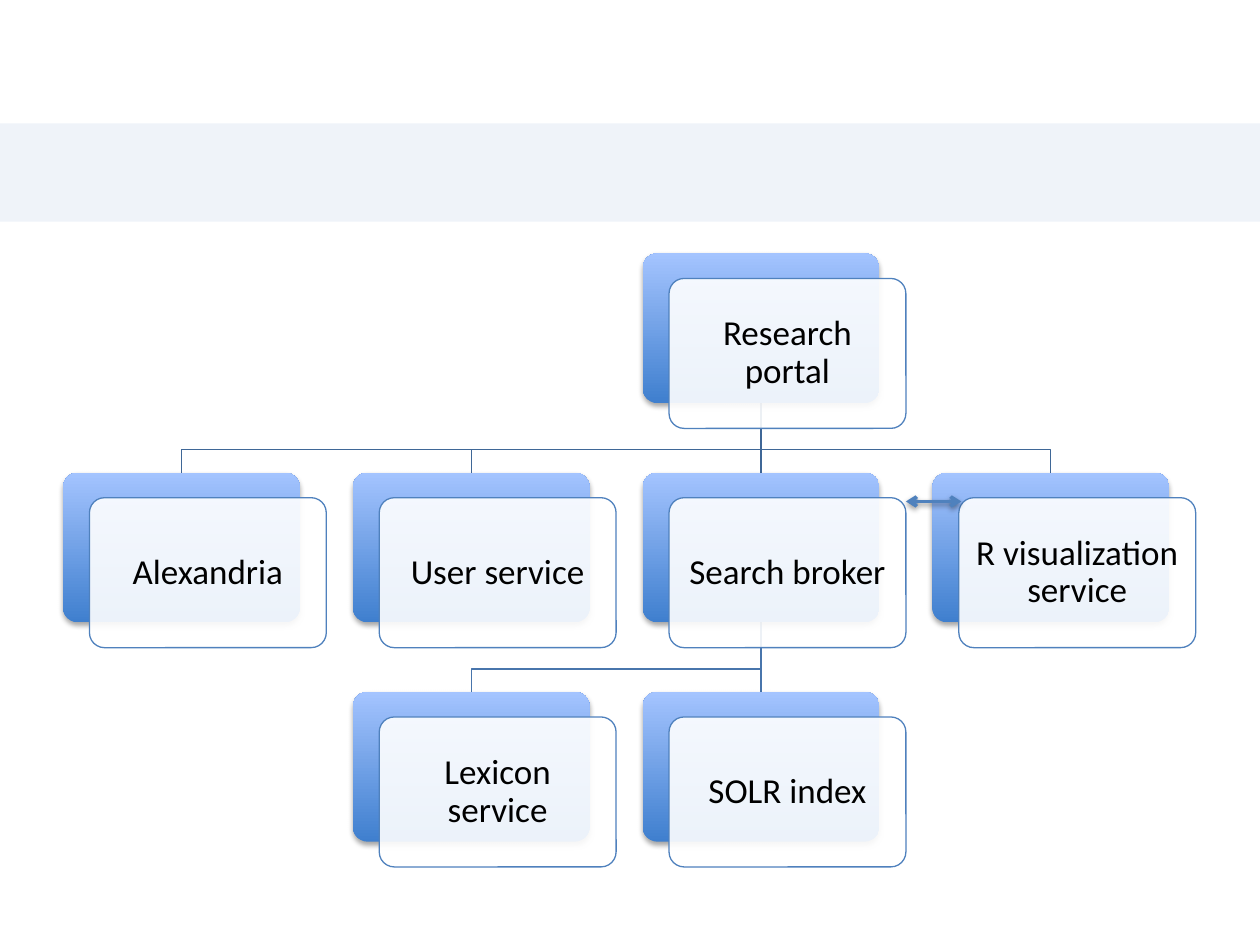
from pptx import Presentation, util as u
from pptx.dml.color import RGBColor
from pptx.enum import shapes, text
from pptx.oxml import parse_xml
from pptx.oxml.ns import nsdecls, qn
from lxml import etree

BLUE = RGBColor(0x4F, 0x81, 0xBD)
DEEP_BLUE = RGBColor(0x3F, 0x7F, 0xCE)
SKY_BLUE = RGBColor(0xA4, 0xC4, 0xFF)
PORTAL_LINK = RGBColor(0x3F, 0x67, 0x97)
BROKER_LINK = RGBColor(0x48, 0x75, 0xAC)
WHITE = RGBColor(0xFF, 0xFF, 0xFF)
BLACK = RGBColor(0, 0, 0)

# Card grid, in inches
LEFT, TOP = 0.5, 2.01
COLUMN_STEP, ROW_STEP = 2.3, 1.74
CARD_W, CARD_H = 1.88, 1.19
FRONT_SHIFT = 0.2
LINK_BEND = 0.37

# Name: (column, row)
SERVICES = {
    "Research portal": (2, 0),
    "Alexandria": (0, 1),
    "User service": (1, 1),
    "Search broker": (2, 1),
    "Lexicon service": (1, 2),
    "SOLR index": (2, 2),
    "R visualization service": (3, 1),
}
# Parent: (link colour, children)
TREE = {
    "Research portal": (PORTAL_LINK, ["R visualization service", "Search broker",
                                      "User service", "Alexandria"]),
    "Search broker": (BROKER_LINK, ["SOLR index", "Lexicon service"]),
}


def corner(name):
    column, row = SERVICES[name]
    return LEFT + column * COLUMN_STEP, TOP + row * ROW_STEP


def set_alpha(shape, percent):
    colour = shape.fill._xPr.find(qn("a:solidFill"))[0]
    etree.SubElement(colour, qn("a:alpha")).set("val", str(percent * 1000))


def set_effects(shape, shadow_alpha=None, blur=0, distance=0):
    """Replace the theme's shadow with a downward one, or with none."""
    properties = shape._element.spPr
    for old in properties.findall(qn("a:effectLst")):
        properties.remove(old)
    shadow = ""
    if shadow_alpha:
        shadow = (f'<a:outerShdw blurRad="{u.Pt(blur)}" dist="{u.Pt(distance)}" '
                  f'dir="5400000" rotWithShape="0"><a:srgbClr val="{BLACK}">'
                  f'<a:alpha val="{shadow_alpha * 1000}"/></a:srgbClr></a:outerShdw>')
    properties.append(parse_xml(
        f'<a:effectLst {nsdecls("a")}>{shadow}</a:effectLst>'))


def style_line(shape, colour, width):
    shape.line.color.rgb = colour
    shape.line.width = u.Pt(width)


def add_band(slide, width):
    band = slide.shapes.add_shape(shapes.MSO_SHAPE.RECTANGLE, 0, u.Inches(0.98),
                                  width, u.Inches(0.78))
    band.fill.solid()
    band.fill.fore_color.rgb = BLUE
    set_alpha(band, 9)
    band.line.fill.background()
    set_effects(band)


def add_link(slide, parent, child, colour):
    """Draw a link; return it when straight, so that it can be joined."""
    (parent_x, parent_y), (child_x, child_y) = corner(parent), corner(child)
    start_x, end_x, start_y, bend_y, end_y = (u.Inches(v) for v in (
        parent_x + CARD_W / 2, child_x + CARD_W / 2,
        parent_y + CARD_H, parent_y + CARD_H + LINK_BEND, child_y))
    straight = SERVICES[parent][0] == SERVICES[child][0]
    if straight:
        link = slide.shapes.add_connector(shapes.MSO_CONNECTOR.STRAIGHT,
                                          start_x, start_y, end_x, end_y)
    else:
        builder = slide.shapes.build_freeform(start_x, start_y)
        builder.add_line_segments(
            [(start_x, bend_y), (end_x, bend_y), (end_x, end_y)], close=False)
        link = builder.convert_to_shape()
        link.fill.background()
    style_line(link, colour, 0.75)
    set_effects(link)
    return link if straight else None


def add_rounded(slide, x, y):
    card = slide.shapes.add_shape(
        shapes.MSO_SHAPE.ROUNDED_RECTANGLE,
        *(u.Inches(v) for v in (x, y, CARD_W, CARD_H)))
    card.adjustments[0] = 0.1
    return card


def add_card(slide, name):
    x, y = corner(name)
    # Shaded card behind
    back = add_rounded(slide, x, y)
    back.fill.gradient()
    back.fill.gradient_angle = 90
    for stop, position, colour in zip(back.fill.gradient_stops, (0, 1),
                                      (DEEP_BLUE, SKY_BLUE)):
        stop.position = position
        stop.color.rgb = colour
    back.line.fill.background()
    set_effects(back, 35, blur=3.1, distance=1.8)

    # Label card in front
    front = add_rounded(slide, x + FRONT_SHIFT + 0.01, y + FRONT_SHIFT)
    front.fill.solid()
    front.fill.fore_color.rgb = WHITE
    set_alpha(front, 90)
    style_line(front, BLUE, 0.75)
    set_effects(front)
    frame = front.text_frame
    frame.text = name
    frame.word_wrap = True
    frame.vertical_anchor = text.MSO_ANCHOR.MIDDLE
    frame.margin_left = frame.margin_right = u.Inches(0.08)
    frame.margin_top = frame.margin_bottom = u.Inches(0.08)
    label = frame.paragraphs[0]
    label.alignment = text.PP_ALIGN.CENTER
    label.line_spacing = 0.9
    font = label.runs[0].font
    font.name, font.size = "Calibri", u.Pt(20)
    font.color.rgb = BLACK
    return back


def add_exchange_arrow(slide):
    y = u.Inches(3.98)
    arrow = slide.shapes.add_connector(shapes.MSO_CONNECTOR.STRAIGHT,
                                       u.Inches(7.19), y, u.Inches(7.63), y)
    style_line(arrow, BLUE, 2)
    for end in ("a:headEnd", "a:tailEnd"):
        etree.SubElement(arrow.line._get_or_add_ln(), qn(end)).set("type", "arrow")
    set_effects(arrow, 38, blur=3.1, distance=1.6)


def main():
    deck = Presentation()
    deck.slide_width, deck.slide_height = u.Inches(10), u.Inches(7.5)
    slide = deck.slides.add_slide(deck.slide_layouts[6])
    add_band(slide, deck.slide_width)

    # Links lie behind the cards
    links = {(parent, child): add_link(slide, parent, child, colour)
             for parent, (colour, children) in TREE.items() for child in children}
    cards = {name: add_card(slide, name) for name in SERVICES}
    for (parent, child), link in links.items():
        if link is not None:
            link.begin_connect(cards[parent], 2)
            link.end_connect(cards[child], 0)

    add_exchange_arrow(slide)
    deck.save("out.pptx")


if __name__ == "__main__":
    main()
